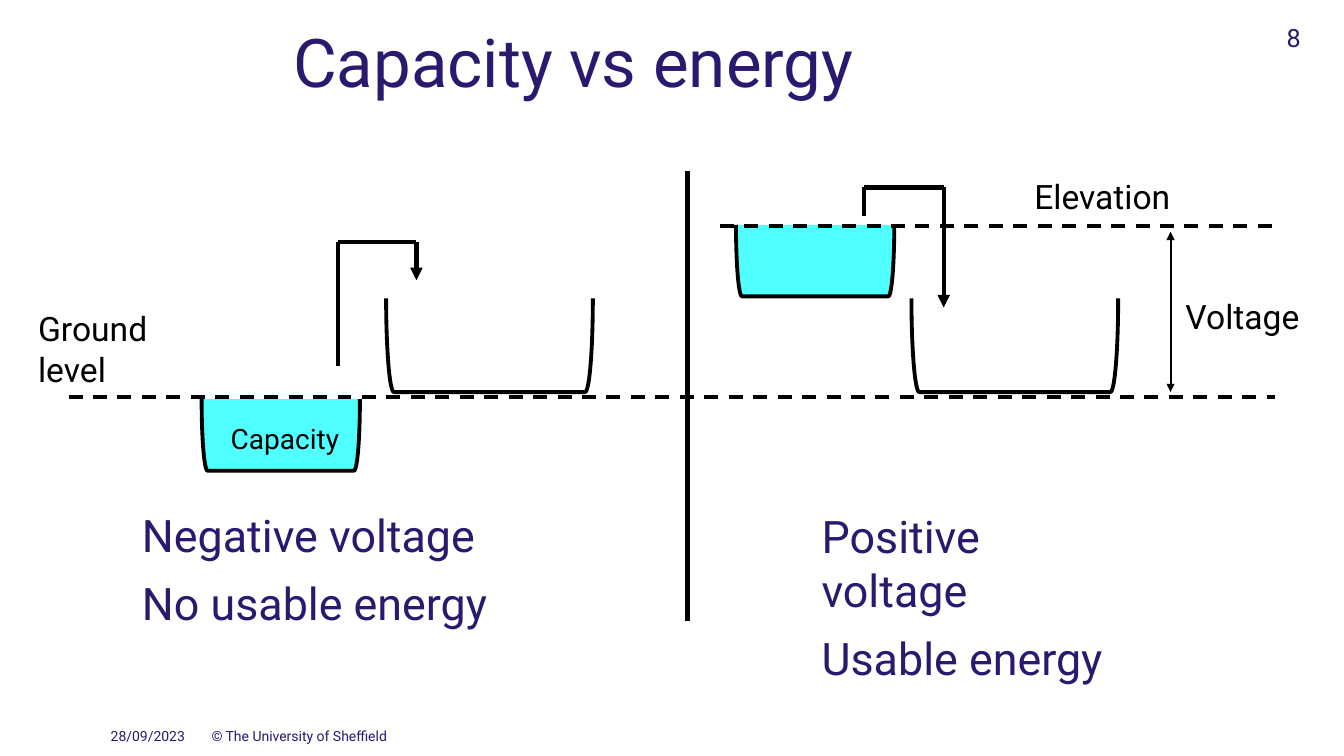
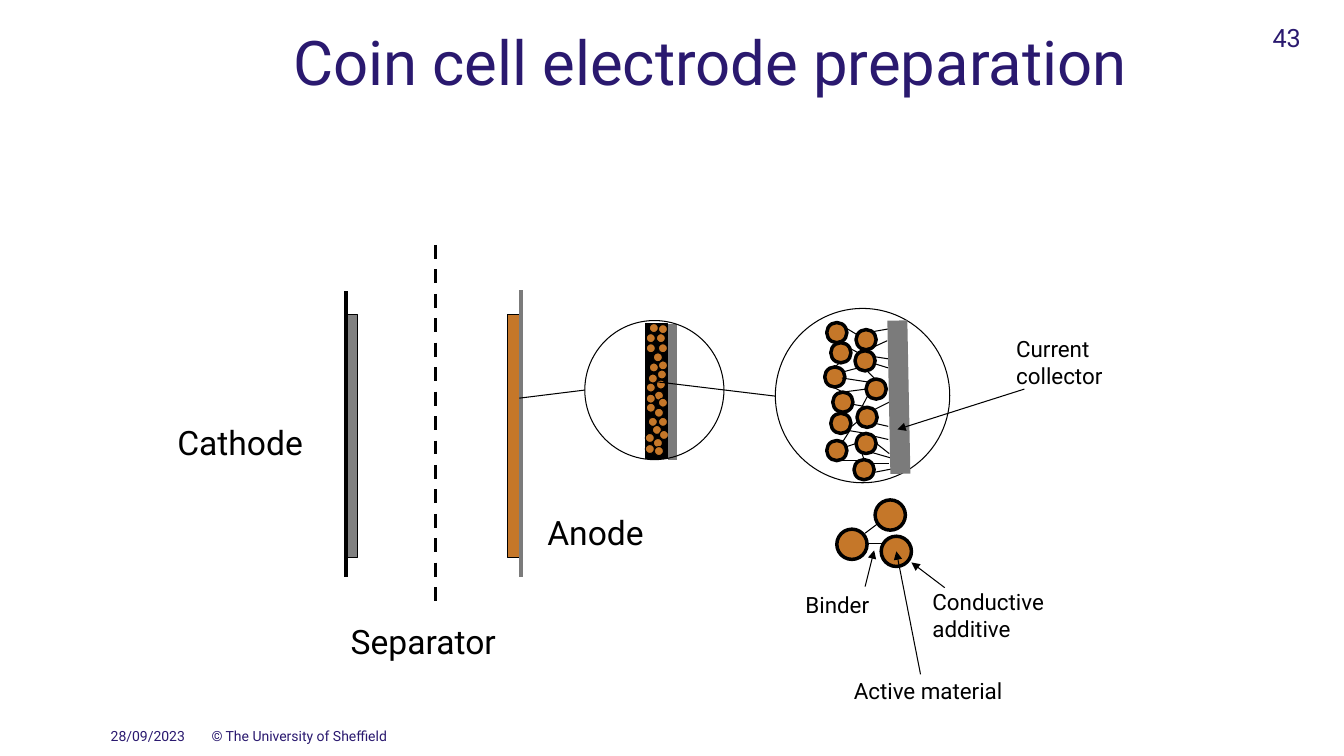
from dataclasses import dataclass
from itertools import pairwise
from typing import Any

from lxml.etree import SubElement
from pptx import Presentation
from pptx.dml.color import RGBColor
from pptx.enum.dml import MSO_LINE
from pptx.enum.shapes import MSO_CONNECTOR, MSO_SHAPE
from pptx.enum.text import MSO_ANCHOR, PP_ALIGN
from pptx.oxml.ns import qn
from pptx.util import Emu, Pt

PX = 9144  # 100 px to the inch
FONT = "Roboto"
NAVY = RGBColor(0x2A, 0x19, 0x6F)
BLACK = RGBColor(0, 0, 0)
WATER = RGBColor(0x50, 0xFF, 0xFF)
COPPER = RGBColor(0xC5, 0x77, 0x29)
CATHODE_GREY = RGBColor(0x80, 0x80, 0x80)
METAL_GREY = RGBColor(0x7B, 0x7B, 0x7B)


@dataclass
class Region:
    """A part of a slide; everything in it is placed from its top left."""
    slide: Any
    left: int = 0
    top: int = 0

    def x(self, value):
        return Emu((self.left + value) * PX)

    def y(self, value):
        return Emu((self.top + value) * PX)


# Basic parts

def add_text(region, box, *lines, size=24, color=BLACK, align=PP_ALIGN.LEFT,
             anchor=MSO_ANCHOR.TOP, line_spacing=None, gap=0):
    left, top, width, height = box
    shape = region.slide.shapes.add_textbox(
        region.x(left), region.y(top), Emu(width * PX), Emu(height * PX))
    frame = shape.text_frame
    frame.word_wrap = True
    frame.vertical_anchor = anchor
    for index, line in enumerate(lines):
        paragraph = frame.add_paragraph() if index else frame.paragraphs[0]
        paragraph.text = line
        paragraph.alignment = align
        paragraph.font.name = FONT
        paragraph.font.size = Pt(size)
        paragraph.font.color.rgb = color
        if line_spacing:
            paragraph.line_spacing = line_spacing
        if index and gap:
            paragraph.space_before = Pt(gap)


def add_shape(region, kind, box, fill=None, weight=0.75):
    left, top, width, height = box
    shape = region.slide.shapes.add_shape(
        kind, region.x(left), region.y(top), Emu(width * PX), Emu(height * PX))
    shape.shadow.inherit = False
    if fill is None:
        shape.fill.background()
    else:
        shape.fill.solid()
        shape.fill.fore_color.rgb = fill
    shape.line.color.rgb = BLACK
    shape.line.width = Pt(weight)
    return shape


def add_line(region, start, end, weight=0.75, color=BLACK, dashed=False, arrows=()):
    connector = region.slide.shapes.add_connector(
        MSO_CONNECTOR.STRAIGHT, region.x(start[0]), region.y(start[1]),
        region.x(end[0]), region.y(end[1]))
    line = connector.line
    line.color.rgb = color
    line.width = Pt(weight)
    if dashed:
        line.dash_style = MSO_LINE.DASH
    properties = connector._element.spPr
    for arrow in arrows:
        SubElement(properties.find(qn("a:ln")), qn(f"a:{arrow}"), type="triangle")
    SubElement(properties, qn("a:effectLst"))


def add_circles(region, positions, diameter, weight):
    for left, top in positions:
        add_shape(region, MSO_SHAPE.OVAL, (left, top, diameter, diameter), COPPER, weight)


def add_strands(region, strands):
    for x1, y1, x2, y2 in strands:
        add_line(region, (x1, y1), (x2, y2))


def start_slide(presentation, title, title_size, number):
    """Adds a slide with the shared title, footer and page number."""
    slide = presentation.slides.add_slide(presentation.slide_layouts[6])
    page = Region(slide)
    add_text(page, (281, 25, 953, 83), title, size=title_size, color=NAVY,
             anchor=MSO_ANCHOR.MIDDLE, line_spacing=0.83)
    add_text(page, (100, 717, 133, 33), "28/09/2023", size=10, color=NAVY)
    add_text(page, (200, 717, 756, 33), "© The University of Sheffield", size=10, color=NAVY)
    add_text(page, (1022, 17, 278, 50), number, size=18, color=NAVY, align=PP_ALIGN.RIGHT)
    return page


# Capacity and energy

def add_bucket(region, left, top, width, height, fill=None):
    """An open bucket: a left bracket turned on its side about its centre."""
    shift = (width - height) // 2
    bucket = add_shape(region, MSO_SHAPE.LEFT_BRACKET,
                       (left + shift, top - shift, height, width), fill, 2.75)
    bucket.rotation = 270


def add_transfer(region, source, pipe):
    """Full bucket, pipe and empty bucket; the origin is on the ground line."""
    add_bucket(region, *source, 157, 71, WATER)
    add_bucket(region, 0, -98, 205, 93)
    segments = list(pairwise(pipe))
    for segment in segments:
        arrows = ["tailEnd"] if segment == segments[-1] else []
        add_line(region, *segment, weight=3, arrows=arrows)


def build_capacity_slide(presentation):
    page = start_slide(presentation, "Capacity vs energy", 48, "8")
    slide = page.slide
    add_transfer(Region(slide, 383, 394), (-183, 2),
                 [(-48, -31), (-48, -154), (30, -154), (30, -116)])
    add_transfer(Region(slide, 904, 394), (-174, -171),
                 [(-47, -180), (-47, -208), (32, -208), (32, -89)])

    # Levels and divider
    add_line(page, (68, 394), (1265, 394), weight=2.5, dashed=True)
    add_line(page, (714, 224), (1271, 224), weight=2.5, dashed=True)
    add_line(page, (682, 170), (682, 616), weight=3.25)
    add_line(page, (1161, 389), (1161, 230), weight=1.5, arrows=["headEnd", "tailEnd"])

    # Labels
    add_text(page, (28, 301, 144, 93), "Ground level")
    add_text(page, (219, 413, 138, 44), "Capacity", size=20)
    add_text(page, (1016, 170, 176, 50), "Elevation")
    add_text(page, (1166, 289, 134, 50), "Voltage")

    # Conclusions
    add_text(page, (131, 499, 370, 136), "Negative voltage", "No usable energy",
             size=32, color=NAVY, gap=10)
    add_text(page, (805, 500, 325, 145), "Positive voltage", "Usable energy",
             size=32, color=NAVY, gap=10)


# Electrode preparation

COATING_DOTS = [
    (71, 13), (73, 23), (68, 32), (73, 40), (72, 49), (71, 59), (69, 70),
    (73, 77), (69, 87), (73, 96), (67, 104), (68, 117), (63, 96), (61, 82),
    (61, 62), (63, 53), (64, 42), (61, 23), (60, 112), (60, 123), (69, 125),
    (74, 109), (61, 13), (64, 3), (73, 4), (61, 73)]
PARTICLES = [
    (79, 42), (51, 131), (49, 58), (90, 70), (57, 83), (81, 98),
    (55, 104), (80, 124), (55, 34), (80, 21), (51, 14), (78, 150)]
BINDER_STRANDS = [
    (71, 20, 81, 26), (73, 39, 84, 45), (67, 63, 82, 59), (67, 83, 90, 80),
    (84, 101, 92, 86), (67, 132, 74, 121), (71, 137, 80, 134), (71, 121, 83, 111),
    (72, 121, 90, 124), (76, 95, 93, 98), (66, 69, 92, 73), (99, 55, 112, 59),
    (98, 38, 111, 32), (99, 48, 112, 50), (99, 114, 112, 117), (99, 127, 112, 130),
    (92, 63, 99, 70), (97, 23, 114, 20), (96, 143, 117, 149), (99, 133, 113, 144),
    (57, 78, 67, 83), (59, 58, 65, 53), (97, 101, 113, 93), (96, 154, 113, 154),
    (66, 151, 83, 151), (86, 144, 88, 150), (96, 163, 122, 158)]


def add_cell(region):
    """Cathode, separator and anode seen from the side."""
    for left, fill in ((0, CATHODE_GREY), (160, COPPER)):
        add_shape(region, MSO_SHAPE.RECTANGLE, (left, 69, 12, 241), fill)
    add_line(region, (0, 46), (0, 329), weight=2.5)
    add_line(region, (89, 0), (89, 362), weight=2.5, dashed=True)
    add_line(region, (174, 45), (174, 329), weight=2.5, color=METAL_GREY)
    add_text(region, (190, 260, 118, 50), "Anode")
    add_text(region, (-177, 171, 191, 50), "Cathode")
    add_text(region, (-5, 368, 188, 50), "Separator")


def add_coating_view(region):
    """First magnification: particles in the coating."""
    add_shape(region, MSO_SHAPE.RECTANGLE, (60, 3, 22, 134), BLACK)
    add_circles(region, COATING_DOTS, 9, 0.75)
    add_line(region, (87, 3), (87, 138), weight=6.5, color=METAL_GREY)
    add_shape(region, MSO_SHAPE.OVAL, (0, 0, 138, 138))


def add_particle_view(region):
    """Second magnification: particles bound to the collector."""
    add_circles(region, PARTICLES, 20, 2.5)
    add_strands(region, BINDER_STRANDS)
    add_shape(region, MSO_SHAPE.OVAL, (0, 0, 173, 173))
    add_line(region, (121, 12), (124, 164), weight=14.25, color=METAL_GREY)
    add_line(region, (247, 80), (121, 120), arrows=["tailEnd"])
    add_text(region, (229, 22, 132, 64), "Current collector", size=16)


def add_particle_key(region):
    """Three enlarged particles with their labels."""
    add_strands(region, [(30, 43, 47, 43), (28, 33, 44, 21)])
    add_circles(region, [(0, 29), (38, 0), (44, 36)], 30, 2.5)
    for label, box, start, tip in (
            ("Binder", (-41, 86, 121, 37), (28, 86), (37, 50)),
            ("Conductive additive", (85, 83, 169, 64), (107, 87), (74, 62)),
            ("Active material", (7, 171, 176, 37), (83, 173), (59, 51))):
        add_line(region, start, tip, arrows=["tailEnd"])
        add_text(region, box, label, size=16)


def build_electrode_slide(presentation):
    page = start_slide(presentation, "Coin cell electrode preparation", 44, "43")
    slide = page.slide
    add_cell(Region(slide, 343, 243))
    add_coating_view(Region(slide, 580, 318))
    add_particle_view(Region(slide, 769, 306))
    add_particle_key(Region(slide, 830, 496))
    # Leaders from each part to its magnified view
    add_strands(page, [(515, 395, 580, 387), (653, 379, 769, 393)])


def main():
    presentation = Presentation()
    presentation.slide_width = Emu(1333 * PX)
    presentation.slide_height = Emu(750 * PX)
    build_capacity_slide(presentation)
    build_electrode_slide(presentation)
    presentation.save("out.pptx")


if __name__ == "__main__":
    main()
